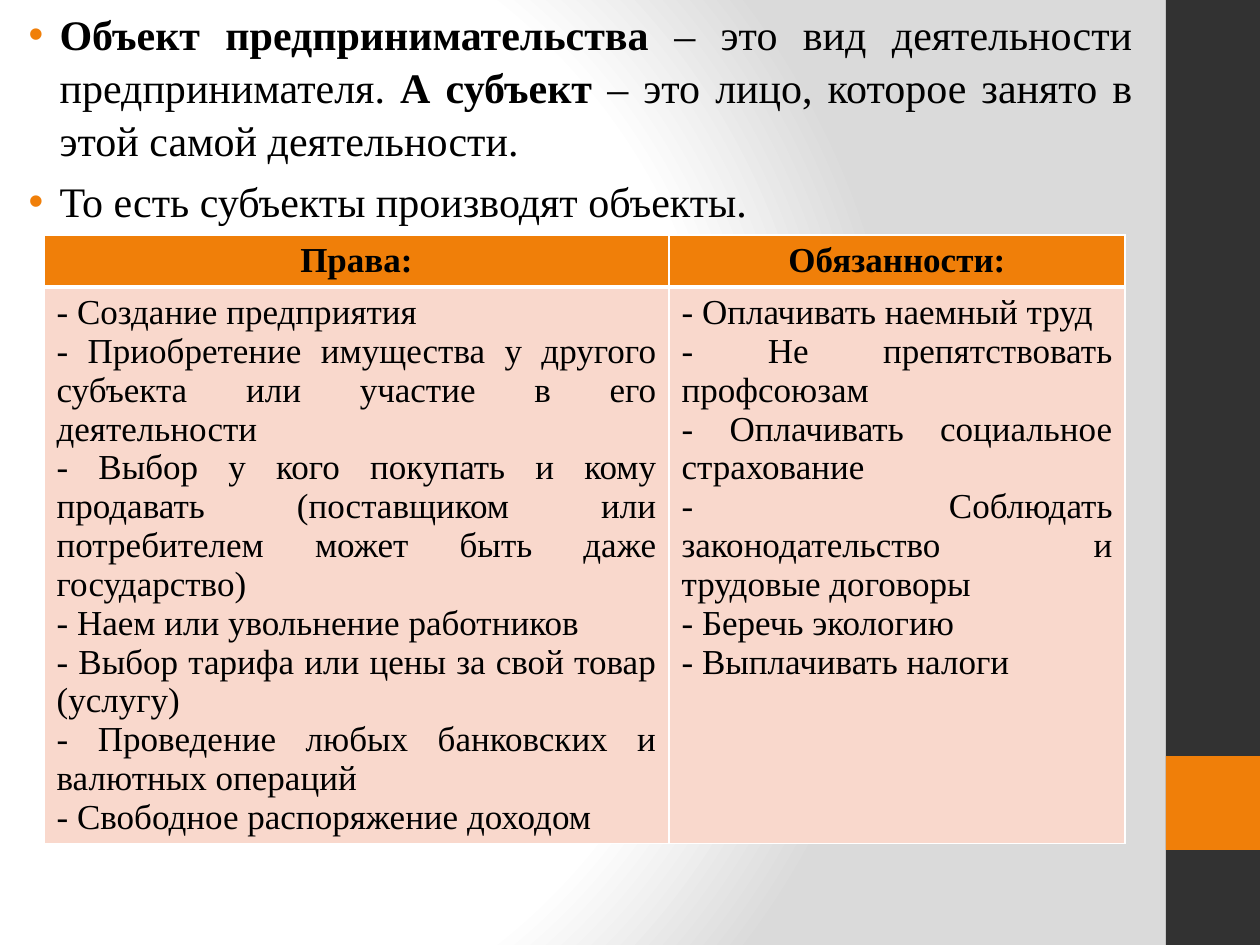
from pptx import Presentation
from pptx.dml.color import RGBColor
from pptx.enum.shapes import MSO_SHAPE
from pptx.enum.text import MSO_AUTO_SIZE, PP_ALIGN
from pptx.oxml import parse_xml
from pptx.oxml.ns import nsdecls
from pptx.util import Emu, Pt

RECTANGLE = MSO_SHAPE.RECTANGLE
NO_AUTOFIT = MSO_AUTO_SIZE.NONE
CENTER, JUSTIFY = PP_ALIGN.CENTER, PP_ALIGN.JUSTIFY

PX_PER_INCH = 126
WIDTH, HEIGHT = 1260, 945
FONT = "Times New Roman"
BLACK, WHITE, GREY = "000000", "FFFFFF", "DADADA"
DARK, ORANGE, PINK = "323232", "F07F09", "F9D8CC"

DEFINITIONS = [
    [
        ("Объект предпринимательства ", True),
        ("– это вид деятельности предпринимателя. ", False),
        ("А субъект ", True),
        ("– это лицо, которое занято в этой самой деятельности.", False),
    ],
    [("То есть субъекты производят объекты.", False)],
]
COLUMNS = [
    (
        "Права:",
        625,
        [
            "- Создание предприятия",
            "- Приобретение имущества у другого субъекта или участие в его деятельности",
            "- Выбор у кого покупать и кому продавать (поставщиком или потребителем"
            " может быть даже государство)",
            "- Наем или увольнение работников",
            "- Выбор тарифа или цены за свой товар (услугу)",
            "- Проведение любых банковских и валютных операций",
            "- Свободное распоряжение доходом",
        ],
    ),
    (
        "Обязанности:",
        456,
        [
            "- Оплачивать наемный труд",
            "- Не препятствовать профсоюзам",
            "- Оплачивать социальное страхование",
            "- Соблюдать законодательство и трудовые договоры",
            "- Беречь экологию",
            "- Выплачивать налоги",
        ],
    ),
]


def px(length):
    """Turn whole pixels into EMU."""
    return Emu(round(length * 914400 / PX_PER_INCH))


def color(value):
    """Turn a hex string into a colour."""
    return RGBColor.from_string(value)


def add_span(para, text, size, bold):
    """Add one formatted span of text to a paragraph."""
    span = para.add_run()
    span.text = text
    for name, value in {"name": FONT, "size": Pt(size), "bold": bold}.items():
        setattr(span.font, name, value)
    span.font.color.rgb = color(BLACK)


def paint_background(page):
    """Fill the page with a radial gradient from white to grey."""
    stops = "".join(
        f'<a:gs pos="{place * 1000}"><a:srgbClr val="{tone}"/></a:gs>'
        for place, tone in [(0, WHITE), (75, WHITE), (100, GREY)]
    )
    page.element.cSld.insert(0, parse_xml(
        f'<p:bg {nsdecls("p", "a")}><p:bgPr><a:gradFill rotWithShape="1">'
        f'<a:gsLst>{stops}</a:gsLst><a:path path="circle">'
        '<a:fillToRect l="20000" t="50000" r="100000" b="50000"/></a:path>'
        '</a:gradFill><a:effectLst/></p:bgPr></p:bg>'
    ))


def add_sidebar(page, left, top, width, height):
    """Draw the dark band with its square accent."""
    for offset, depth, tone in [(0, height, DARK), (height * 4 // 5, width, ORANGE)]:
        box = page.shapes.add_shape(
            RECTANGLE, px(left), px(top + offset), px(width), px(depth))
        box.shadow.inherit = False
        box.fill.solid()
        box.fill.fore_color.rgb = color(tone)
        box.line.fill.background()


def fill_body(box, left, top, width, height):
    """Place the bulleted definitions in the body placeholder."""
    place = {"left": left, "top": top, "width": width, "height": height}
    for name, value in place.items():
        setattr(box, name, px(value))
    frame = box.text_frame
    frame.auto_size = NO_AUTOFIT
    for index, spans in enumerate(DEFINITIONS):
        para = frame.add_paragraph() if index else frame.paragraphs[0]
        para.alignment = JUSTIFY
        para.line_spacing = 1.05
        for text, bold in spans:
            add_span(para, text, 24, bold)
        layout = para._p.get_or_add_pPr()
        layout.set("marL", str(px(47)))
        layout.set("indent", str(-px(31)))
        layout.append(parse_xml(
            f'<a:buClr {nsdecls("a")}><a:srgbClr val="{ORANGE}"/></a:buClr>'))


def fill_cell(cell, lines, tone, align, bold, borders):
    """Write the lines of a cell and set its fill and borders."""
    for index, text in enumerate(lines):
        para = cell.text_frame.add_paragraph() if index else cell.text_frame.paragraphs[0]
        para.alignment = align
        add_span(para, text, 20, bold)
    for side, points in borders.items():
        cell._tc.get_or_add_tcPr().append(parse_xml(
            f'<a:ln{side} {nsdecls("a")} w="{Pt(points)}"><a:solidFill>'
            f'<a:srgbClr val="{WHITE}"/></a:solidFill></a:ln{side}>'))
    cell.fill.solid()
    cell.fill.fore_color.rgb = color(tone)


def add_rights_table(page, left, top, header, height):
    """Build the table of rights and duties."""
    width = sum(column[1] for column in COLUMNS)
    table = page.shapes.add_table(
        2, len(COLUMNS), px(left), px(top), px(width), px(height)).table
    table.horz_banding = False
    table.rows[0].height = px(header)
    table.rows[1].height = px(height - header)
    for index, (heading, span, lines) in enumerate(COLUMNS):
        table.columns[index].width = px(span)
        fill_cell(table.cell(0, index), [heading], ORANGE, CENTER, True,
                  {"L": 1, "R": 1, "T": 1, "B": 3})
        fill_cell(table.cell(1, index), lines, PINK, JUSTIFY, False,
                  {"L": 1, "R": 1, "T": 3, "B": 1})


def main():
    """Build the deck and save it."""
    deck = Presentation()
    deck.slide_width, deck.slide_height = px(WIDTH), px(HEIGHT)
    page = deck.slides.add_slide(deck.slide_layouts[1])
    title = page.shapes.title.element
    title.getparent().remove(title)
    paint_background(page)
    add_sidebar(page, 1166, 0, 94, HEIGHT)
    fill_body(page.placeholders[1], 0, 0, 1145, 214)
    add_rights_table(page, 44, 235, 52, 607)
    deck.save("out.pptx")


if __name__ == "__main__":
    main()
